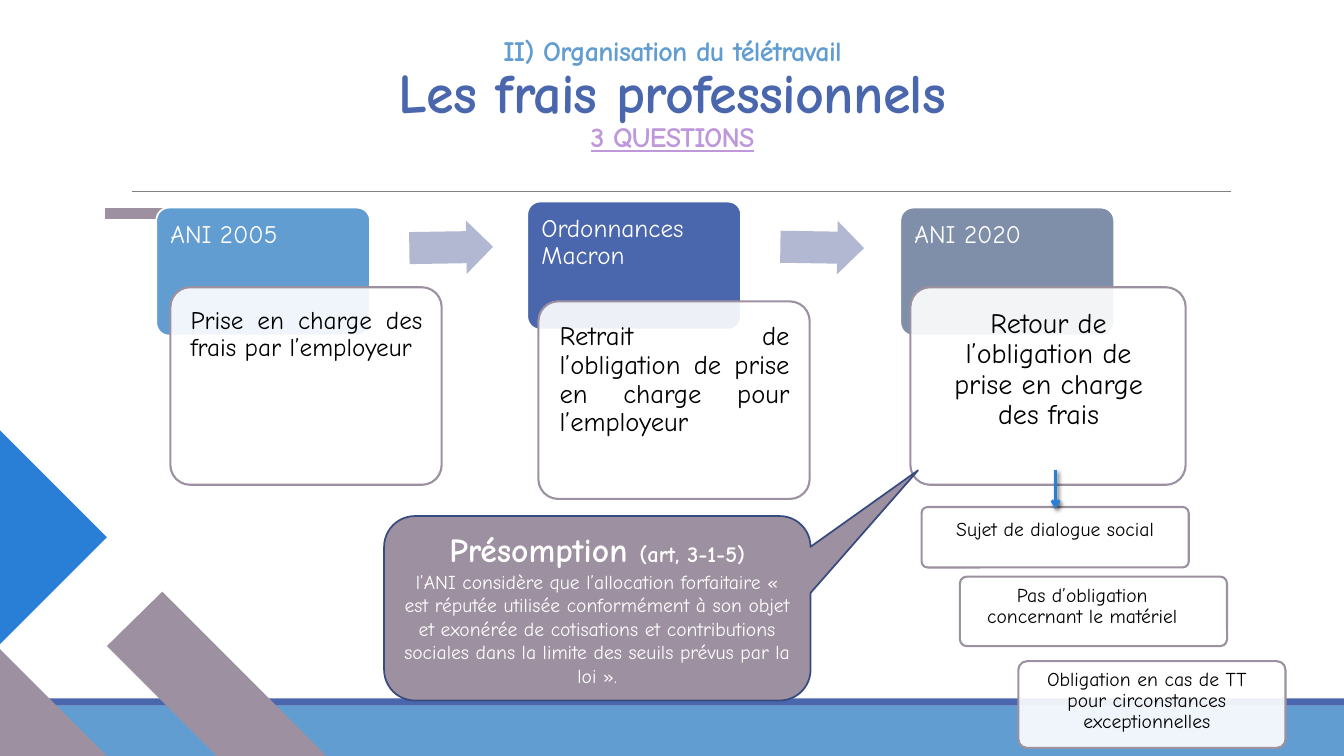
from dataclasses import dataclass

from lxml.etree import SubElement
from pptx import Presentation
from pptx.dml.color import RGBColor
from pptx.enum.shapes import MSO_CONNECTOR, MSO_SHAPE
from pptx.enum.text import MSO_ANCHOR, PP_ALIGN
from pptx.oxml.ns import qn
from pptx.util import Inches, Pt

COLUMNS, ROWS = 13.33, 7.5
SLIDE_WIDTH, SLIDE_HEIGHT = Inches(COLUMNS), Inches(ROWS)


@dataclass(frozen=True)
class Theme:
    font: str = "Comic Neue"
    sky: str = "629DD1"
    royal: str = "4A66AC"
    azure: str = "297FD5"
    mauve: str = "9D90A0"
    lilac: str = "BE98DB"
    slate: str = "7F8FA9"
    navy: str = "374B7F"
    pale_arrow: str = "B2B8D2"
    rule: str = "808080"
    white: str = "FFFFFF"
    black: str = "000000"
    title: float = 40
    callout_title: float = 24
    heading: float = 20
    step: float = 18
    reference: float = 16
    note: float = 14


THEME = Theme()


def column(count):
    return round(SLIDE_WIDTH * count / COLUMNS)


def row(count):
    return round(SLIDE_HEIGHT * count / ROWS)


def place(box):
    left, top, width, height = box
    return column(left), row(top), column(width), row(height)


def apply_format(target, values):
    for name, value in values.items():
        setattr(target, name, value)


def paint(shape, fill, line=None, line_width=1.5, opacity=100):
    shape.shadow.inherit = False
    shape.fill.solid()
    shape.fill.fore_color.rgb = RGBColor.from_string(fill)
    if opacity < 100:
        color = shape.fill._xPr.find(qn("a:solidFill"))[0]
        SubElement(color, qn("a:alpha"), val=str(opacity * 1000))
    if line:
        shape.line.color.rgb = RGBColor.from_string(line)
        shape.line.width = Pt(line_width)
    else:
        shape.line.fill.background()


def add_block(slide, kind, box, fill, adjustments=(), rotation=0, **style):
    shape = slide.shapes.add_shape(kind, *place(box))
    for index, value in enumerate(adjustments):
        shape.adjustments[index] = value
    shape.rotation = rotation
    paint(shape, fill, **style)
    return shape


def add_polygon(slide, points, fill):
    corners = [(column(x), row(y)) for x, y in points]
    builder = slide.shapes.build_freeform(*corners[0])
    builder.add_line_segments(corners[1:], close=True)
    paint(builder.convert_to_shape(), fill)


def add_line(slide, start, end, color, width, arrow=False):
    line = slide.shapes.add_connector(
        MSO_CONNECTOR.STRAIGHT, column(start[0]), row(start[1]), column(end[0]), row(end[1]))
    line.line.color.rgb = RGBColor.from_string(color)
    line.line.width = Pt(width)
    properties = line._element.spPr
    effects = SubElement(properties, qn("a:effectLst"))
    if arrow:
        SubElement(properties.find(qn("a:ln")), qn("a:tailEnd"), type="arrow")
        shadow = SubElement(effects, qn("a:outerShdw"), blurRad=str(Pt(3)),
                            dist=str(Pt(2)), dir=str(45 * 60000))
        shadow_color = SubElement(shadow, qn("a:srgbClr"), val=THEME.black)
        SubElement(shadow_color, qn("a:alpha"), val="60000")


def set_frame(frame, margins, anchor=MSO_ANCHOR.TOP):
    left, top, right, bottom = map(Inches, margins)
    apply_format(frame, {
        "word_wrap": True, "vertical_anchor": anchor, "margin_left": left,
        "margin_top": top, "margin_right": right, "margin_bottom": bottom})


def add_run(paragraph, text, size, color, **extra):
    run = paragraph.add_run()
    run.text = text
    apply_format(run.font, {"name": THEME.font, "size": Pt(size), **extra})
    run.font.color.rgb = RGBColor.from_string(color)
    return run


def add_text(slide, box, text, size, color, align, margins):
    frame = slide.shapes.add_textbox(*place(box)).text_frame
    set_frame(frame, margins)
    paragraph = frame.paragraphs[0]
    apply_format(paragraph, {"alignment": align, "line_spacing": 0.9})
    add_run(paragraph, text, size, color)


def add_panel(slide, box):
    add_block(slide, MSO_SHAPE.ROUNDED_RECTANGLE, box, THEME.white, [0.1],
              line=THEME.mauve, opacity=90)


def add_step(slide, label, fill, card, panel, text, size, align, margin):
    left, top = card
    add_block(slide, MSO_SHAPE.ROUNDED_RECTANGLE, (left, top, 2.12, 1.27), fill, [0.1],
              line=THEME.white, line_width=1.25)
    add_text(slide, (left, top, 2.12, 0.85), label, THEME.step, THEME.white,
             PP_ALIGN.LEFT, (0.14, 0.14, 0.14, 0.07))
    add_panel(slide, panel)
    x, y, width, height = panel
    add_text(slide, (x + 0.06, y + 0.06, width - 0.11, height - 0.11), text, size,
             THEME.black, align, [margin] * 4)


def add_note(slide, panel, text_box, text):
    add_panel(slide, panel)
    add_text(slide, text_box, text, THEME.note, THEME.black, PP_ALIGN.CENTER, [0.14] * 4)


def add_decor(slide):
    for top, height, color in ((7, 0.5, THEME.sky), (6.93, 0.07, THEME.royal)):
        add_block(slide, MSO_SHAPE.RECTANGLE, (0, top, COLUMNS, height), color)
    add_line(slide, (1.31, 1.9), (12.21, 1.9), THEME.rule, 0.5)
    add_polygon(slide, [(3.24, 7.5), (2.15, 7.5), (1.06, 6.41), (1.61, 5.87)], THEME.mauve)
    add_polygon(slide, [(1.06, 7.5), (0, 7.5), (0, 6.44)], THEME.mauve)
    add_polygon(slide, [(0, 4.27), (1.06, 5.33), (0, 6.39)], THEME.azure)
    add_line(slide, (1.04, 2.12), (3.38, 2.12), THEME.mauve, 8)


def add_title(slide):
    frame = slide.shapes.add_textbox(*place((2.77, 0.22, 7.8, 1.3))).text_frame
    set_frame(frame, [0] * 4, MSO_ANCHOR.BOTTOM)
    paragraph = frame.paragraphs[0]
    apply_format(paragraph, {"alignment": PP_ALIGN.CENTER, "line_spacing": 0.85})
    lines = (("II) Organisation du télétravail", THEME.heading, THEME.sky, False),
             ("Les frais professionnels", THEME.title, THEME.royal, False),
             ("3 QUESTIONS", THEME.heading, THEME.lilac, True))
    for index, (text, size, color, underline) in enumerate(lines):
        if index:
            paragraph.add_line_break()
        run = add_run(paragraph, text, size, color, bold=True, underline=underline)
        run.font._element.set("spc", "-50")


def add_callout(slide):
    callout = add_block(slide, MSO_SHAPE.ROUNDED_RECTANGULAR_CALLOUT, (3.81, 5.12, 4.23, 1.83),
                        THEME.mauve, (0.752, -0.748, 0.167), line=THEME.navy, line_width=1.25)
    frame = callout.text_frame
    set_frame(frame, (0.1, 0.05, 0.1, 0.05), MSO_ANCHOR.MIDDLE)
    heading, body = frame.paragraphs[0], frame.add_paragraph()
    for paragraph in (heading, body):
        paragraph.alignment = PP_ALIGN.CENTER
    add_run(heading, "Présomption ", THEME.callout_title, THEME.white, bold=True)
    add_run(heading, "(art, 3-1-5)", THEME.reference, THEME.white, bold=True)
    add_run(body, "l’ANI considère que l’allocation forfaitaire « est réputée utilisée "
            "conformément à son objet et exonérée de cotisations et contributions sociales "
            "dans la limite des seuils prévus par la loi ».", THEME.note, THEME.white)


def main():
    presentation = Presentation()
    apply_format(presentation, {"slide_width": SLIDE_WIDTH, "slide_height": SLIDE_HEIGHT})
    slide = presentation.slides.add_slide(presentation.slide_layouts[6])
    add_decor(slide)
    add_title(slide)
    add_step(slide, "ANI 2005", THEME.sky, (1.55, 2.06), (1.69, 2.85, 2.69, 1.96),
             "Prise en charge des frais par l’employeur", 18, PP_ALIGN.JUSTIFY, 0.14)
    add_step(slide, "Ordonnances Macron", THEME.royal, (5.23, 2), (5.34, 2.99, 2.69, 1.96),
             "Retrait de l’obligation de prise en charge pour l’employeur",
             19, PP_ALIGN.JUSTIFY, 0.15)
    add_step(slide, "ANI 2020", THEME.slate, (8.93, 2.06), (9.03, 2.85, 2.73, 1.96),
             "Retour de l’obligation de prise en charge des frais", 20, PP_ALIGN.CENTER, 0.16)
    for left, rotation in ((4.06, 359.1), (7.74, 0.9)):
        add_block(slide, MSO_SHAPE.RIGHT_ARROW, (left, 2.19, 0.83, 0.53), THEME.pale_arrow,
                  (0.6, 0.5), rotation)
    add_note(slide, (9.14, 5.03, 2.65, 0.6), (9.19, 5.05, 2.55, 0.56),
             "Sujet de dialogue social")
    add_note(slide, (10.1, 6.56, 2.65, 0.86), (10.1, 6.5, 2.55, 0.99),
             "Obligation en cas de TT pour circonstances exceptionnelles")
    add_note(slide, (9.52, 5.72, 2.65, 0.69), (9.62, 5.67, 2.23, 0.66),
             "Pas d’obligation concernant le matériel")
    add_line(slide, (10.47, 4.66), (10.47, 5.05), THEME.azure, 2, arrow=True)
    add_callout(slide)
    presentation.save("out.pptx")


if __name__ == "__main__":
    main()
